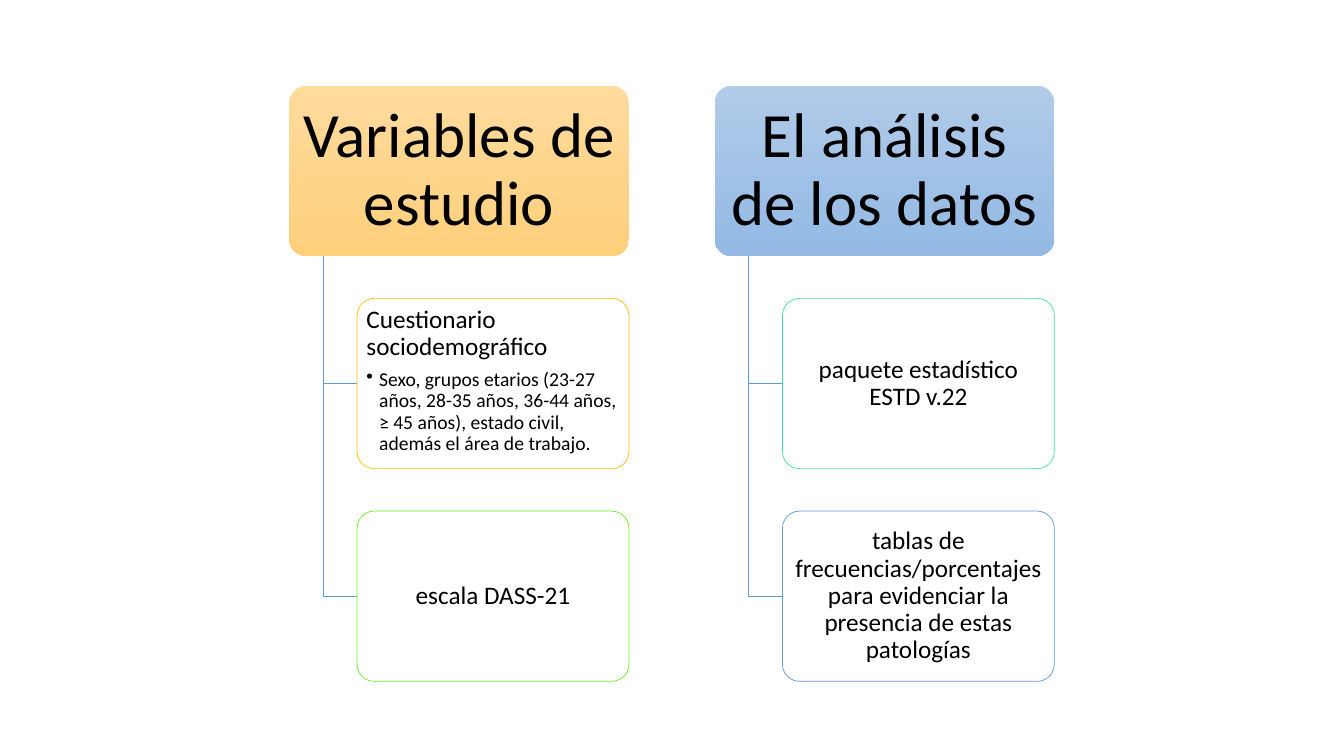
from lxml.etree import SubElement
from pptx import Presentation
from pptx.dml.color import RGBColor
from pptx.enum.shapes import MSO_SHAPE
from pptx.enum.text import MSO_ANCHOR, PP_ALIGN
from pptx.oxml.ns import qn
from pptx.util import Cm, Pt

BLACK = RGBColor(0x00, 0x00, 0x00)
WHITE = RGBColor(0xFF, 0xFF, 0xFF)
BLUE = RGBColor(0x5B, 0x9B, 0xD5)
GOLD = RGBColor(0xFF, 0xC0, 0x00)
GREEN = RGBColor(0x67, 0xEF, 0x21)
MINT = RGBColor(0x3F, 0xE1, 0x9B)
ORANGE_TINTS = (RGBColor(0xFF, 0xDB, 0x9E), RGBColor(0xFF, 0xD0, 0x7C))
BLUE_TINTS = (RGBColor(0xB1, 0xCB, 0xE9), RGBColor(0x93, 0xB9, 0xE4))

FONT = "Calibri"
BRANCH_WIDTH = Cm(8.56)
CARD_HEIGHT = Cm(4.29)
ROW_PITCH = Cm(5.36)
BRANCH_PITCH = Cm(10.72)
FIRST_LEFT, TOP = Cm(7.29), Cm(2.16)
TRUNK_OFFSET = Cm(0.86)
LEAF_OFFSET = Cm(1.71)

BRANCHES = [
    ("Variables de estudio", ORANGE_TINTS, [
        ("Cuestionario sociodemográfico", GOLD,
         "Sexo, grupos etarios (23-27 años, 28-35 años, 36-44 años, "
         "≥ 45 años), estado civil, además el área de trabajo."),
        ("escala DASS-21", GREEN, None),
    ]),
    ("El análisis de los datos", BLUE_TINTS, [
        ("paquete estadístico ESTD v.22", MINT, None),
        ("tablas de frecuencias/porcentajes para evidenciar la presencia "
         "de estas patologías", BLUE, None),
    ]),
]


def write(paragraph, text, size, align, space_after=0):
    paragraph.text = text
    paragraph.alignment = align
    paragraph.line_spacing = 0.9
    paragraph.space_after = Pt(space_after)
    paragraph.font.name = FONT
    paragraph.font.size = Pt(size)
    paragraph.font.color.rgb = BLACK


def add_card(slide, left, top, width, inset_x, inset_y):
    card = slide.shapes.add_shape(
        MSO_SHAPE.ROUNDED_RECTANGLE, left, top, width, CARD_HEIGHT)
    card.adjustments[0] = 0.1
    card.shadow.inherit = False
    frame = card.text_frame
    frame.word_wrap = True
    frame.vertical_anchor = MSO_ANCHOR.MIDDLE
    frame.margin_left = frame.margin_right = inset_x
    frame.margin_top = frame.margin_bottom = inset_y
    return card


def add_heading(slide, left, top, title, tints):
    heading = add_card(slide, left, top, BRANCH_WIDTH, Cm(0.23), Cm(0.15))
    heading.fill.gradient()
    heading.fill.gradient_angle = 270
    for stop, tint in zip(heading.fill.gradient_stops, tints):
        stop.color.rgb = tint
    heading.line.fill.background()
    write(heading.text_frame.paragraphs[0], title, 45, PP_ALIGN.CENTER)


def add_elbow(slide, left, top, right, bottom):
    outline = slide.shapes.build_freeform(left, top)
    outline.add_line_segments([(left, bottom), (right, bottom)], close=False)
    elbow = outline.convert_to_shape()
    elbow.shadow.inherit = False
    elbow.fill.background()
    elbow.line.color.rgb = BLUE
    elbow.line.width = Pt(1)


def add_leaf(slide, left, top, label, border, detail):
    leaf = add_card(slide, left, top, BRANCH_WIDTH - LEAF_OFFSET, Cm(0.11), Cm(0.08))
    leaf.fill.solid()
    leaf.fill.fore_color.rgb = WHITE
    leaf.line.color.rgb = border
    leaf.line.width = Pt(0.5)
    frame = leaf.text_frame
    if detail is None:
        write(frame.paragraphs[0], label, 18, PP_ALIGN.CENTER)
        return
    frame.vertical_anchor = MSO_ANCHOR.TOP
    write(frame.paragraphs[0], label, 18, PP_ALIGN.LEFT, 6.3)
    bullet = frame.add_paragraph()
    bullet.level = 1
    properties = bullet._p.get_or_add_pPr()
    properties.set("marL", str(Cm(0.32)))
    properties.set("indent", str(-Cm(0.32)))
    SubElement(properties, qn("a:buChar")).set("char", "•")
    write(bullet, detail, 14, PP_ALIGN.LEFT)


def add_branch(slide, left, top, title, tints, leaves):
    add_heading(slide, left, top, title, tints)
    for row, (label, border, detail) in enumerate(leaves, start=1):
        leaf_top = top + row * ROW_PITCH
        add_elbow(slide, left + TRUNK_OFFSET, top + CARD_HEIGHT,
                  left + LEAF_OFFSET, leaf_top + CARD_HEIGHT // 2)
        add_leaf(slide, left + LEAF_OFFSET, leaf_top, label, border, detail)


def main():
    presentation = Presentation()
    presentation.slide_width = Cm(33.87)
    presentation.slide_height = Cm(19.05)
    slide = presentation.slides.add_slide(presentation.slide_layouts[6])
    for column, (title, tints, leaves) in enumerate(BRANCHES):
        add_branch(slide, FIRST_LEFT + column * BRANCH_PITCH, TOP,
                   title, tints, leaves)
    presentation.save("out.pptx")


if __name__ == "__main__":
    main()
